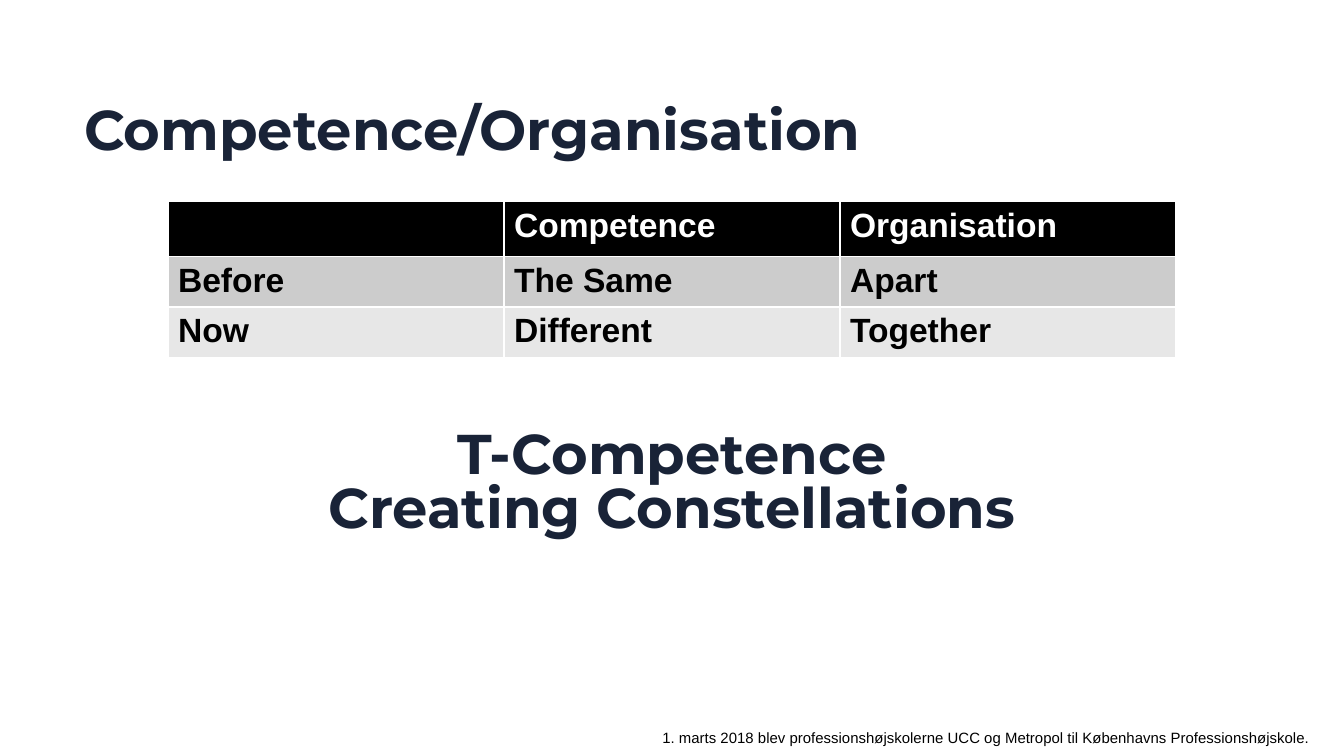
from lxml import etree
from pptx import Presentation, util as u
from pptx.dml.color import RGBColor
from pptx.enum import text as t
from pptx.oxml import ns

WIDE = 10
HIGH = WIDE * 9 / 16
HUES = {"navy": "192337", "black": "000000", "white": "FFFFFF",
        "mid": "CCCCCC", "pale": "E7E7E7"}
PAD = (WIDE * 3 / 400, HIGH / 150) * 2
ROWS = [("", "Competence", "Organisation"),
        ("Before", "The Same", "Apart"),
        ("Now", "Different", "Together")]
# Fill, font colour and height of each row
LOOKS = [("black", "white", 0.41),
         ("mid", "black", 0.37),
         ("pale", "black", 0.37)]


def style(para, face, size, hue, bold=True):
    for run in para.runs:
        font = run.font
        font.name, font.size, font.bold = face, u.Pt(size), bold
        font.color.rgb = RGBColor.from_string(HUES[hue])


def set_pad(part, pad):
    (part.margin_left, part.margin_top,
     part.margin_right, part.margin_bottom) = map(u.Inches, pad)


def add_text(slide, box, lines, face, size, hue, bold=True, align="LEFT",
             pitch=1.0, pad=(0, 0, 0, 0), anchor="BOTTOM"):
    frame = slide.shapes.add_textbox(*map(u.Inches, box)).text_frame
    frame.word_wrap = True
    frame.vertical_anchor = t.MSO_ANCHOR[anchor]
    set_pad(frame, pad)
    frame.text = "\n".join(lines)
    for para in frame.paragraphs:
        para.alignment = t.PP_ALIGN[align]
        para.line_spacing = pitch
        style(para, face, size, hue, bold)


def add_rules(cell):
    props = cell._tc.get_or_add_tcPr()
    for side in "LRTB":
        line = etree.SubElement(props, ns.qn("a:ln" + side), w=str(u.Pt(1)))
        fill = etree.SubElement(line, ns.qn("a:solidFill"))
        etree.SubElement(fill, ns.qn("a:srgbClr"), val=HUES["white"])


def add_grid(slide, left, top, width):
    high = sum(look[2] for look in LOOKS)
    grid = slide.shapes.add_table(
        len(ROWS), len(ROWS[0]),
        *map(u.Inches, (left, top, width, high))).table
    for row, words, (fill, ink, tall) in zip(grid.rows, ROWS, LOOKS):
        row.height = u.Inches(tall)
        for cell, word in zip(row.cells, words):
            add_rules(cell)
            cell.fill.solid()
            cell.fill.fore_color.rgb = RGBColor.from_string(HUES[fill])
            set_pad(cell, PAD)
            if word:
                cell.text_frame.text = word
                style(cell.text_frame.paragraphs[0], "Arial", 18, ink)


def main():
    deck = Presentation()
    deck.slide_width, deck.slide_height = u.Inches(WIDE), u.Inches(HIGH)
    slide = deck.slides.add_slide(deck.slide_layouts[6])
    edge, span = WIDE / 8, WIDE * 3 / 4

    # Footer
    add_text(slide, (3.65, 5.42, 6.1, 0.13),
             ["1. marts 2018 blev professionshøjskolerne UCC og Metropol "
              "til Københavns Professionshøjskole."],
             "Arial", 8, "black", bold=False, align="RIGHT", anchor="TOP")
    # Title
    add_text(slide, (WIDE / 16, 0.33, 8.19, 0.88),
             ["Competence/Organisation"], "Montserrat", 30, "navy", pitch=0.9)
    # Before and now
    add_grid(slide, edge, 1.5, span)
    # Closing message
    add_text(slide, (edge, 3.11, span, 0.94),
             ["T-Competence", "Creating Constellations"],
             "Montserrat", 30, "navy", align="CENTER", pitch=0.8, pad=PAD)
    deck.save("out.pptx")


if __name__ == "__main__":
    main()
